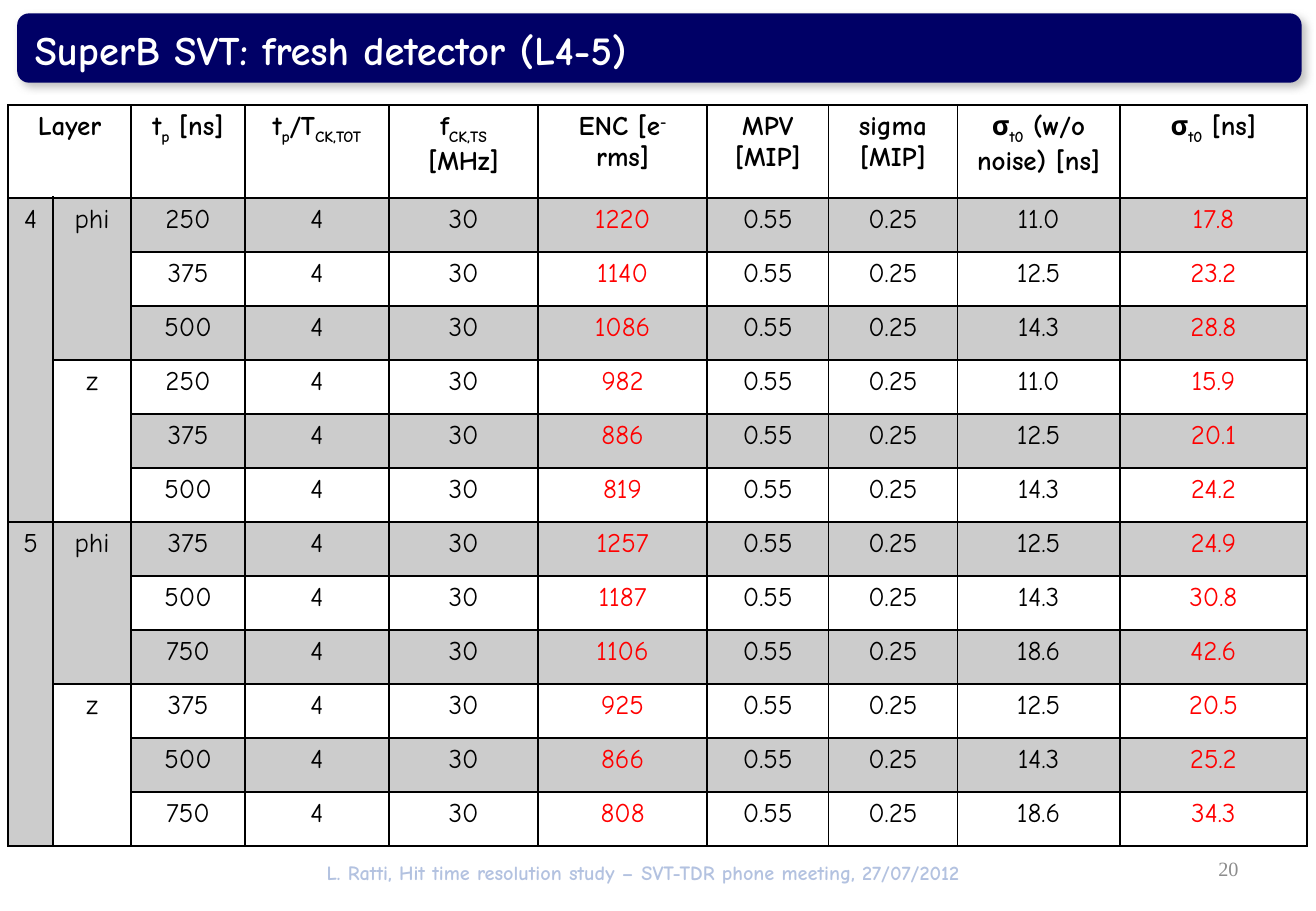
from lxml.etree import SubElement
from pptx import Presentation
from pptx.dml.color import RGBColor
from pptx.enum.shapes import MSO_SHAPE as Shape
from pptx.enum.text import MSO_ANCHOR as Anchor, PP_ALIGN as Align
from pptx.oxml import parse_xml
from pptx.oxml.ns import nsdecls, qn
from pptx.util import Cm, Pt

# Content
TITLE = "SuperB SVT: fresh detector (L4-5)"
FOOTER = "L. Ratti, Hit time resolution study – SVT-TDR phone meeting, 27/07/2012"
PAGE = "20"
SUB, SUP = -25, 30
# Each heading is a list of (text, baseline shift in percent); Layer spans two columns
HEADINGS = [
    [("Layer", 0)],
    [],
    [("t", 0), ("p", SUB), (" [ns]", 0)],
    [("t", 0), ("p", SUB), ("/T", 0), ("CK,TOT", SUB)],
    [("f", 0), ("CK,TS", SUB), (" [MHz]", 0)],
    [("ENC [e", 0), ("- ", SUP), ("rms]", 0)],
    [("MPV [MIP]", 0)],
    [("sigma [MIP]", 0)],
    [("σ", 0), ("t0", SUB), (" (w/o noise) [ns]", 0)],
    [("σ", 0), ("t0", SUB), (" [ns]", 0)],
]
# Layer, view, then (peaking time, ENC, resolution without noise, resolution)
GROUPS = [
    ("4", "phi", [("250", "1220", "11.0", "17.8"),
                  ("375", "1140", "12.5", "23.2"),
                  ("500", "1086", "14.3", "28.8")]),
    ("4", "z", [("250", "982", "11.0", "15.9"),
                ("375", "886", "12.5", "20.1"),
                ("500", "819", "14.3", "24.2")]),
    ("5", "phi", [("375", "1257", "12.5", "24.9"),
                  ("500", "1187", "14.3", "30.8"),
                  ("750", "1106", "18.6", "42.6")]),
    ("5", "z", [("375", "925", "12.5", "20.5"),
                ("500", "866", "14.3", "25.2"),
                ("750", "808", "18.6", "34.3")]),
]
RATIO, CLOCK, MPV, SIGMA = "4", "30", "0.55", "0.25"
RED_COLUMNS = (5, 9)

# Style
COLORS = {"navy": "000066", "white": "FFFFFF", "black": "000000", "red": "FF0000",
          "footer": "003399", "page": "8C8C8C", "shadow": "808080"}
COMIC, TIMES = "Comic Neue", "Times New Roman"
COLUMN_WIDTHS = [0.94, 1.63, 2.38, 3.01, 3.12, 3.53, 2.54, 2.69, 3.4, 3.91]
HEADING_HEIGHT, ROW_HEIGHT = 1.94, 1.13


def fill_solid(fill, color, opacity=100):
    fill.solid()
    fill.fore_color.rgb = RGBColor.from_string(COLORS[color])
    if opacity < 100:
        rgb = fill._xPr.find(qn("a:solidFill"))[0]
        SubElement(rgb, qn("a:alpha")).set("val", str(opacity * 1000))


def add_panel(kind, box, color, opacity=100):
    panel = slide.shapes.add_shape(kind, *map(Cm, box))
    panel.shadow.inherit = False
    panel.line.fill.background()
    fill_solid(panel.fill, color, opacity)
    return panel


def style(font, size, color, name=COMIC, bold=False):
    font.size, font.name, font.bold = Pt(size), name, bold
    font.color.rgb = RGBColor.from_string(COLORS[color])


def add_label(text, box, align, size, color, name=COMIC, bold=True):
    frame = slide.shapes.add_textbox(*map(Cm, box)).text_frame
    frame.word_wrap = True
    frame.vertical_anchor = Anchor.MIDDLE
    frame.text = text
    frame.paragraphs[0].alignment = align
    style(frame.paragraphs[0].runs[0].font, size, color, name, bold)


def fill_cell(row, column, pieces):
    cell = table.cell(row, column)
    paragraph = cell.text_frame.paragraphs[0]
    paragraph.alignment = Align.CENTER
    for text, shift in pieces:
        run = paragraph.add_run()
        run.text = text
        color = "red" if row and column in RED_COLUMNS else "black"
        style(run.font, 16, color, bold=row == 0)
        if shift:
            run._r.get_or_add_rPr().set("baseline", str(shift * 1000))
    if row % 2:
        fill_solid(cell.fill, "black", 20)
    else:
        cell.fill.background()
    # Borders: the rule below the headings is twice as thick
    for index, side in enumerate("LRTB"):
        thick = (row, side) in ((0, "B"), (1, "T"))
        cell._tc.get_or_add_tcPr().insert(index, parse_xml(
            f'<a:ln{side} {nsdecls("a")} w="{Pt(2 if thick else 1)}"><a:solidFill>'
            f'<a:srgbClr val="{COLORS["black"]}"/></a:solidFill></a:ln{side}>'))


deck = Presentation()
deck.slide_width, deck.slide_height = Cm(27.51), Cm(19.05)
slide = deck.slides.add_slide(deck.slide_layouts[6])

# Footer and the veils over it
add_label(FOOTER, (4.85, 17.86, 17.2, 0.76), Align.CENTER, 12, "footer")
add_panel(Shape.RECTANGLE, (24.69, 17.7, 2.26, 0.97), "white", 40)

# Title bar with its shadow
bar = add_panel(Shape.ROUNDED_RECTANGLE, (0.36, 0.28, 26.85, 1.45), "navy")
bar.adjustments[0] = 0.17
bar._element.spPr.find(qn("a:effectLst")).append(parse_xml(
    f'<a:outerShdw {nsdecls("a")} blurRad="{Pt(5)}" dist="{Pt(3)}" dir="2700000" '
    f'algn="tl" rotWithShape="0"><a:srgbClr val="{COLORS["shadow"]}">'
    '<a:alpha val="50000"/></a:srgbClr></a:outerShdw>'))
add_panel(Shape.RECTANGLE, (0.2, 16.36, 27.1, 2.54), "white", 70)
add_label(PAGE, (19.71, 17.65, 6.43, 1.02), Align.RIGHT, 12, "page", TIMES, False)

# Table rows: layer and view are written only where their merged cell starts
rows = [HEADINGS]
previous_layer = None
for layer, view, measures in GROUPS:
    for number, (peaking, enc, no_noise, resolution) in enumerate(measures):
        values = ["" if layer == previous_layer else layer, "" if number else view,
                  peaking, RATIO, CLOCK, enc, MPV, SIGMA, no_noise, resolution]
        rows.append([[(value, 0)] if value else [] for value in values])
        previous_layer = layer

table_height = HEADING_HEIGHT + ROW_HEIGHT * (len(rows) - 1)
table = slide.shapes.add_table(len(rows), len(HEADINGS), Cm(0.17), Cm(2.2),
                               Cm(sum(COLUMN_WIDTHS)), Cm(table_height)).table
table.horz_banding = table.first_row = False
for column, width in zip(table.columns, COLUMN_WIDTHS):
    column.width = Cm(width)
for r, row in enumerate(rows):
    table.rows[r].height = Cm(ROW_HEIGHT if r else HEADING_HEIGHT)
    for c, pieces in enumerate(row):
        fill_cell(r, c, pieces)

# Merged cells
table.cell(0, 0).merge(table.cell(0, 1))
for column, span in ((0, 6), (1, 3)):
    for top in range(1, len(rows), span):
        table.cell(top, column).merge(table.cell(top + span - 1, column))

# Title
add_label(TITLE, (0.48, 0.4, 25.78, 1.27), Align.LEFT, 24, "white")

deck.save("out.pptx")
